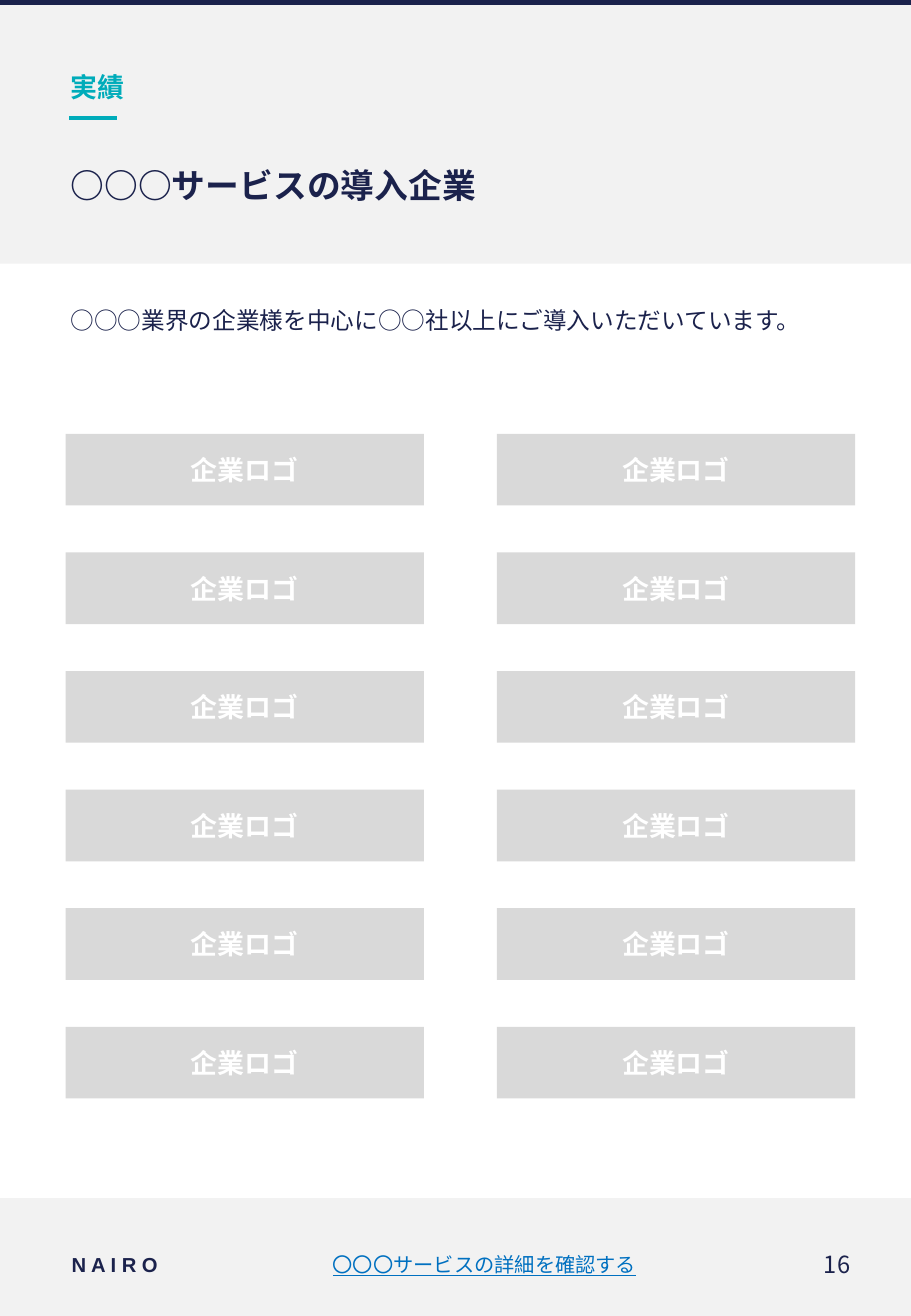
from dataclasses import dataclass

import pptx
import pptx.dml.color
import pptx.enum.shapes
import pptx.enum.text
import pptx.oxml.ns
import pptx.util
from lxml import etree
from pptx.util import Inches

ALIGN = pptx.enum.text.PP_ALIGN
ANCHOR = pptx.enum.text.MSO_ANCHOR


@dataclass(frozen=True)
class Theme:
    navy: str = "1B224C"
    teal: str = "00ACBA"
    link: str = "0070C0"
    band: str = "F2F2F2"
    tile: str = "D9D9D9"
    white: str = "FFFFFF"
    latin: str = "Arial"
    japanese: str = "Noto Sans CJK JP"
    title_size: int = 20
    label_size: int = 16
    body_size: int = 14
    footer_size: int = 12


THEME = Theme()


def rgb(value):
    return pptx.dml.color.RGBColor.from_string(value)


def write(shape, text, size, color, bold=False, align=ALIGN.LEFT,
          font=THEME.latin, anchor=ANCHOR.MIDDLE, wrap=True):
    """Put one formatted paragraph in a shape and return the paragraph."""
    frame = shape.text_frame
    frame.margin_left = frame.margin_right = Inches(0.04)
    frame.margin_top = frame.margin_bottom = Inches(0.04)
    frame.vertical_anchor = anchor
    frame.word_wrap = wrap
    frame.auto_size = pptx.enum.text.MSO_AUTO_SIZE.NONE
    frame.text = text
    paragraph = frame.paragraphs[0]
    paragraph.alignment = align
    paragraph.space_before = pptx.util.Pt(0)
    paragraph.font.size = pptx.util.Pt(size)
    paragraph.font.bold = bold
    paragraph.font.name = font
    paragraph.font.color.rgb = rgb(color)
    # East Asian typeface for the Japanese characters
    properties = paragraph.font._element
    etree.SubElement(properties, pptx.oxml.ns.qn("a:ea"), typeface=THEME.japanese)
    return paragraph


def place(shape, left, top, width, height):
    shape.left, shape.top = Inches(left), Inches(top)
    shape.width, shape.height = Inches(width), Inches(height)
    return shape


def add_box(slide, left, top, width, height, color):
    box = slide.shapes.add_shape(
        pptx.enum.shapes.MSO_SHAPE.RECTANGLE,
        Inches(left), Inches(top), Inches(width), Inches(height))
    box.shadow.inherit = False
    box.fill.solid()
    box.fill.fore_color.rgb = rgb(color)
    box.line.fill.background()
    return box


def add_text(slide, left, top, width, height, text, size, color, **style):
    box = slide.shapes.add_textbox(
        Inches(left), Inches(top), Inches(width), Inches(height))
    return write(box, text, size, color, **style)


def add_rule(slide, left, right, top):
    rule = slide.shapes.add_connector(
        pptx.enum.shapes.MSO_CONNECTOR.STRAIGHT,
        Inches(left), Inches(top), Inches(right), Inches(top))
    rule.line.color.rgb = rgb(THEME.teal)
    rule.line.width = pptx.util.Pt(2.5)
    etree.SubElement(rule._element.spPr, pptx.oxml.ns.qn("a:effectLst"))


def add_logo_grid(slide, columns=2, rows=6):
    for column in range(columns):
        for row in range(rows):
            tile = add_box(slide, 0.54 + 3.55 * column, 3.57 + 0.976 * row,
                           2.95, 0.59, THEME.tile)
            write(tile, "企業ロゴ", THEME.label_size, THEME.white, bold=True,
                  align=ALIGN.CENTER, font=THEME.japanese)


def fill_placeholders(slide):
    fields = {field.placeholder_format.idx: field for field in slide.placeholders}
    title, section, lead = fields.pop(0), fields.pop(1), fields.pop(3)

    write(place(title, 0.54, 1.13, 6.5, 0.79), "○○○サービスの導入企業",
          THEME.title_size, THEME.navy, bold=True)

    heading = write(place(section, 0.54, 0.52, 6.49, 0.39), "実績",
                    THEME.label_size, THEME.teal, bold=True)
    heading.space_before = pptx.util.Pt(7.5)

    sentence = write(place(lead, 0.54, 2.36, 6.5, 1.18),
                     "○○○業界の企業様を中心に○○社以上にご導入いただいています。",
                     THEME.body_size, THEME.navy, anchor=ANCHOR.TOP)
    sentence.line_spacing = 1.5
    sentence.space_after = pptx.util.Pt(4)

    for unused in fields.values():
        unused._element.getparent().remove(unused._element)


def add_footer(slide):
    add_text(slide, 0.55, 10.25, 1.57, 0.31, "N A I R O", THEME.footer_size,
             THEME.navy, bold=True, wrap=False)
    details = add_text(slide, 2.12, 10.25, 3.74, 0.31,
                       "〇〇〇サービスの詳細を確認する", THEME.footer_size,
                       THEME.link, align=ALIGN.CENTER)
    details.font.underline = True
    add_text(slide, 5.86, 10.25, 1.18, 0.31, "16", THEME.body_size, THEME.navy,
             align=ALIGN.RIGHT, font=THEME.japanese)


def main():
    presentation = pptx.Presentation()
    presentation.slide_width = Inches(7.5)
    presentation.slide_height = Inches(10.83)
    comparison_layout = presentation.slide_layouts[4]
    slide = presentation.slides.add_slide(comparison_layout)

    # Background bands, sent behind the placeholders
    bands = [
        add_box(slide, 0, 9.86, 7.5, 0.97, THEME.band),
        add_box(slide, 0, 0, 7.5, 2.17, THEME.band),
        add_box(slide, 0, 0, 7.5, 0.04, THEME.navy),
    ]
    for position, band in enumerate(bands, start=2):
        slide.shapes._spTree.insert(position, band._element)

    # Header and lead sentence
    fill_placeholders(slide)
    add_rule(slide, 0.57, 0.96, 0.97)

    # Customer logos and footer
    add_logo_grid(slide)
    add_footer(slide)
    presentation.save("out.pptx")


if __name__ == "__main__":
    main()
